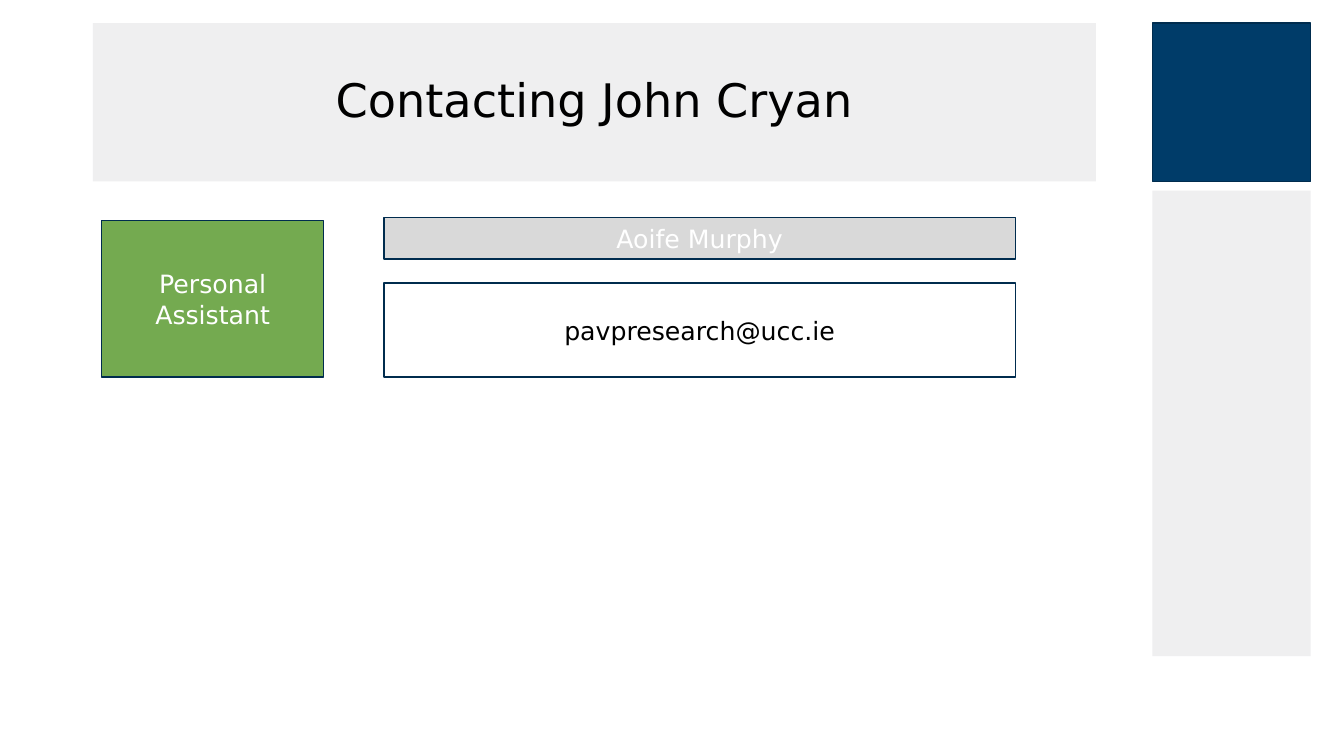
from dataclasses import dataclass

from pptx import Presentation
from pptx.dml.color import RGBColor
from pptx.enum import shapes, text
from pptx.util import Inches, Pt


@dataclass(frozen=True)
class Theme:
    font: str = "DejaVu Sans"
    title_size: int = 33
    body_size: int = 18
    panel: str = "EFEFF0"
    navy: str = "003C69"
    outline: str = "002C4E"
    green: str = "74AA50"
    grey: str = "D9D9D9"
    white: str = "FFFFFF"
    black: str = "000000"


THEME = Theme()


def paint(block, fill):
    block.fill.solid()
    block.fill.fore_color.rgb = RGBColor.from_string(fill)


def write(block, words, size=THEME.body_size, color=THEME.white, line_spacing=None):
    frame = block.text_frame
    frame.word_wrap = True
    frame.auto_size = text.MSO_AUTO_SIZE.NONE
    frame.vertical_anchor = text.MSO_ANCHOR.MIDDLE
    paragraph = frame.paragraphs[0]
    paragraph.alignment = text.PP_ALIGN.CENTER
    paragraph.line_spacing = line_spacing
    run = paragraph.add_run()
    run.text = words
    run.font.name = THEME.font
    run.font.size = Pt(size)
    run.font.color.rgb = RGBColor.from_string(color)


def add_block(slide, left, top, width, height, fill, outline=THEME.outline):
    block = slide.shapes.add_shape(
        shapes.MSO_SHAPE.RECTANGLE,
        Inches(left), Inches(top), Inches(width), Inches(height))
    block.shadow.inherit = False
    paint(block, fill)
    if outline:
        block.line.color.rgb = RGBColor.from_string(outline)
        block.line.width = Pt(1)
    else:
        block.line.fill.background()
    return block


def add_sidebar(slide, left, top, width, height):
    """Navy square above a pale panel that fills the rest of the height."""
    panel_top = width + 0.09
    add_block(slide, left, top + panel_top, width, height - panel_top,
              THEME.panel, outline=None)
    add_block(slide, left, top, width, width, THEME.navy)


def add_title(slide, left, top, width, height):
    title = slide.shapes.title
    title.left, title.top = Inches(left), Inches(top)
    title.width, title.height = Inches(width), Inches(height)
    paint(title, THEME.panel)
    write(title, "Contacting John Cryan", size=THEME.title_size,
          color=THEME.black, line_spacing=0.9)


def add_contact(slide, left, top, width, height, role, person, email):
    """Role at the left, with the name above the e-mail address at the right."""
    role_width, role_drop = 2.2, 0.03
    details_offset, name_height, email_offset = 2.8, 0.41, 0.65
    details_left = left + details_offset
    details_width = width - details_offset

    role_block = add_block(slide, left, top + role_drop, role_width,
                           height - role_drop, THEME.green)
    write(role_block, role)
    name_block = add_block(slide, details_left, top, details_width,
                           name_height, THEME.grey)
    write(name_block, person)
    email_block = add_block(slide, details_left, top + email_offset,
                            details_width, height - email_offset, THEME.white)
    write(email_block, email, color=THEME.black)


def main():
    deck = Presentation()
    deck.slide_width, deck.slide_height = Inches(13.33), Inches(7.5)
    slide = deck.slides.add_slide(deck.slide_layouts.get_by_name("Title Only"))
    add_sidebar(slide, 11.43, 0.23, 1.57, 6.28)
    add_title(slide, 0.92, 0.23, 9.95, 1.57)
    add_contact(slide, 1.01, 2.16, 9.06, 1.58,
                "Personal Assistant", "Aoife Murphy", "pavpresearch@ucc.ie")
    deck.save("out.pptx")


if __name__ == "__main__":
    main()
